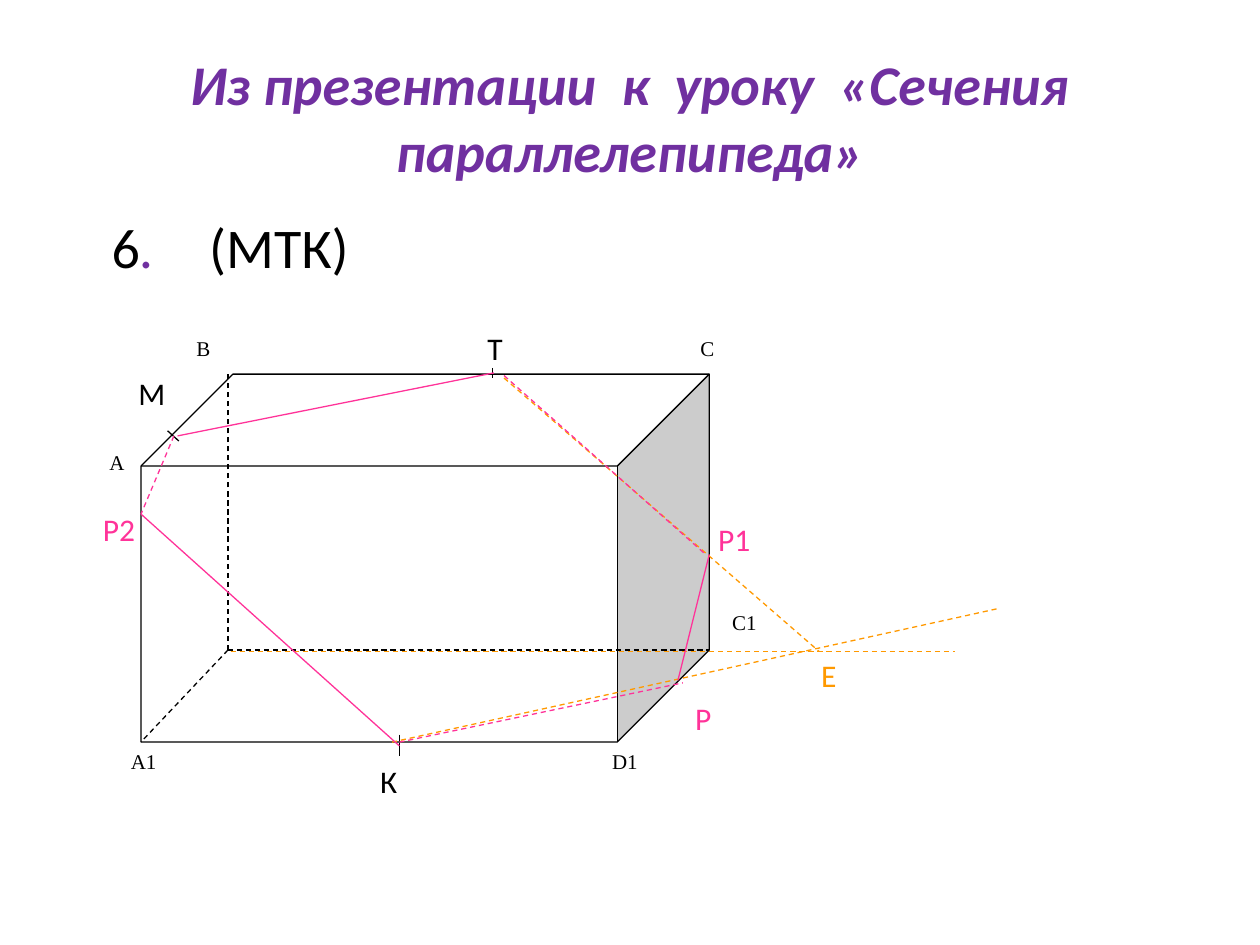
from dataclasses import dataclass
from lxml.etree import SubElement
from pptx import Presentation
from pptx.dml.color import RGBColor as RGB
from pptx.enum.dml import MSO_LINE as Dash
from pptx.enum.shapes import MSO_CONNECTOR as Conn, MSO_SHAPE as Kind
from pptx.enum.text import MSO_ANCHOR as Anchor, MSO_AUTO_SIZE as Fit, PP_ALIGN as Align
from pptx.oxml.ns import qn
from pptx.util import Pt


@dataclass(frozen=True)
class Theme:
    violet = RGB(0x70, 0x30, 0xA0)
    black = RGB(0, 0, 0)
    white = RGB(255, 255, 255)
    pink = RGB(0xFF, 0x33, 0x99)
    orange = RGB(0xFF, 0x99, 0)
    sans = "Calibri"
    serif = "Times New Roman"
    head = 32
    mark = 18
    small = 12
    stroke = 0.75


theme = Theme()


def write(frame, text, size, color, face=theme.sans):
    """Add one run to the first paragraph and return it."""
    run = frame.paragraphs[0].add_run()
    run.text = text
    run.font.size, run.font.name = Pt(size), face
    run.font.color.rgb = color
    return run


def draw(home, start, end, color, dashed=False):
    line = home.add_connector(Conn.STRAIGHT, *map(Pt, start + end))
    line.line.color.rgb = color
    line.line.width = Pt(theme.stroke)
    if dashed:
        line.line.dash_style = Dash.DASH
    SubElement(line._element.spPr, qn("a:effectLst"))


deck = Presentation()
deck.slide_width, deck.slide_height = Pt(720), Pt(540)
slide = deck.slides.add_slide(deck.slide_layouts[1])
shapes = slide.shapes

# Title and task
title, task = slide.placeholders
title.left, title.top, title.width, title.height = map(Pt, (36, 21.6, 648, 90))
title.text_frame.auto_size = Fit.NONE
title.text_frame.vertical_anchor = Anchor.MIDDLE
title.text_frame.paragraphs[0].alignment = Align.CENTER
run = write(title.text_frame, "Из презентации  к  уроку  «Сечения параллелепипеда»",
            theme.head, theme.violet)
run.font.bold = run.font.italic = True

task.left, task.top, task.width, task.height = map(Pt, (112.3, 118.1, 121.7, 54))
task.text_frame.auto_size = Fit.NONE
write(task.text_frame, "(МТК)", theme.head, theme.black)
props = task.text_frame.paragraphs[0]._p.get_or_add_pPr()
props.set("marL", str(Pt(27)))
props.set("indent", str(Pt(-27)))
SubElement(props, qn("a:buNone"))

# Box: the slanted edges run by depth in both directions
left, top, wide, high = 80.6, 213.8, 324.7, 210.2
depth = high / 4
right, base = left + wide, top + high
back, floor = 130.3, base - depth
solid = shapes.add_group_shape().shapes

corners = [
    ("C1", right, 344.9, 49.7, 52.6, 13),
    ("D1", 342.7, base, 49.7, 39.6, 7.2),
    ("A1", 67.7, base, 49.7, 39.6, 7.2),
    ("С", 393.1, 187.9, 25.2, 39.6, 7.2),
    ("А", 55.4, 253.4, 25.2, 39.6, 7.2),
    ("В", 105.1, 187.9, 25.2, 39.6, 7.2),
]
for text, x, y, w, h, inset in corners:
    tag = solid.add_shape(Kind.RECTANGLE, Pt(x), Pt(y), Pt(w), Pt(h))
    tag.shadow.inherit = False
    tag.fill.solid()
    tag.fill.fore_color.rgb = tag.line.color.rgb = theme.white
    tag.line.width = Pt(theme.stroke)
    frame = tag.text_frame
    frame.margin_left = Pt(inset)
    frame.vertical_anchor = Anchor.TOP
    frame.paragraphs[0].alignment = Align.LEFT
    write(frame, text, theme.small, theme.black, theme.serif)

cube = solid.add_shape(Kind.CUBE, Pt(left), Pt(top), Pt(wide), Pt(high))
cube.adjustments[0] = 0.25
cube.shadow.inherit = False
cube.fill.solid()
cube.fill.fore_color.rgb = theme.white
cube.line.color.rgb = theme.black
cube.line.width = Pt(theme.stroke)

hidden = (back, floor)
for end in ((back, top), (right, floor), (left, base)):
    draw(solid, hidden, end, theme.black, True)

# Ticks at the given points, helper lines, then the section
lines = [
    ((95.8, 246.2), (102.2, 252), theme.black, False),
    ((281.5, 210.2), (281.5, 216), theme.black, False),
    ((228.2, 419.8), (228.2, 432), theme.black, False),
    ((224, 424.1), (570.2, 347.8), theme.orange, True),
    ((131.8, 372.2), (545.8, 372.2), theme.orange, True),
    ((288, 216), (468, 372.2), theme.orange, True),
    ((101.5, 249.1), (282.2, 213.1), theme.pink, False),
    ((228.2, 424.1), (390.2, 390.2), theme.pink, True),
    ((288, 214.6), (403.2, 316.8), theme.pink, True),
    ((228.2, 426.2), (left, 293.8), theme.pink, False),
    ((99.4, 249.1), (left, 293.8), theme.pink, True),
    ((right, 316.8), (387.4, 388.8), theme.pink, False),
]
for line in lines:
    draw(shapes, *line)

marks = [
    ("М", 72, 210.2, 32.4, theme.black),
    ("Т", 271.4, 184.3, 30.2, theme.black),
    ("К", 210.2, 432, 30.2, theme.black),
    ("Р", 390.2, 396, 36, theme.pink),
    ("Е", 462.2, 371.5, 23.8, theme.orange),
    ("Р1", 403.2, 293.8, 54, theme.pink),
    ("Р2", 51.8, 288, 48.2, theme.pink),
]
for text, x, y, w, color in marks:
    frame = shapes.add_textbox(Pt(x), Pt(y), Pt(w), Pt(28.8)).text_frame
    frame.word_wrap = True
    frame.auto_size = Fit.SHAPE_TO_FIT_TEXT
    write(frame, text, theme.mark, color)

# Task number
frame = shapes.add_textbox(Pt(0), Pt(118.1), Pt(151.9), Pt(46.1)).text_frame
frame.word_wrap = True
frame.auto_size = Fit.SHAPE_TO_FIT_TEXT
frame.paragraphs[0].alignment = Align.CENTER
write(frame, "6", theme.head, theme.black)
write(frame, ".", theme.head, theme.violet).font.italic = True

deck.save("out.pptx")
